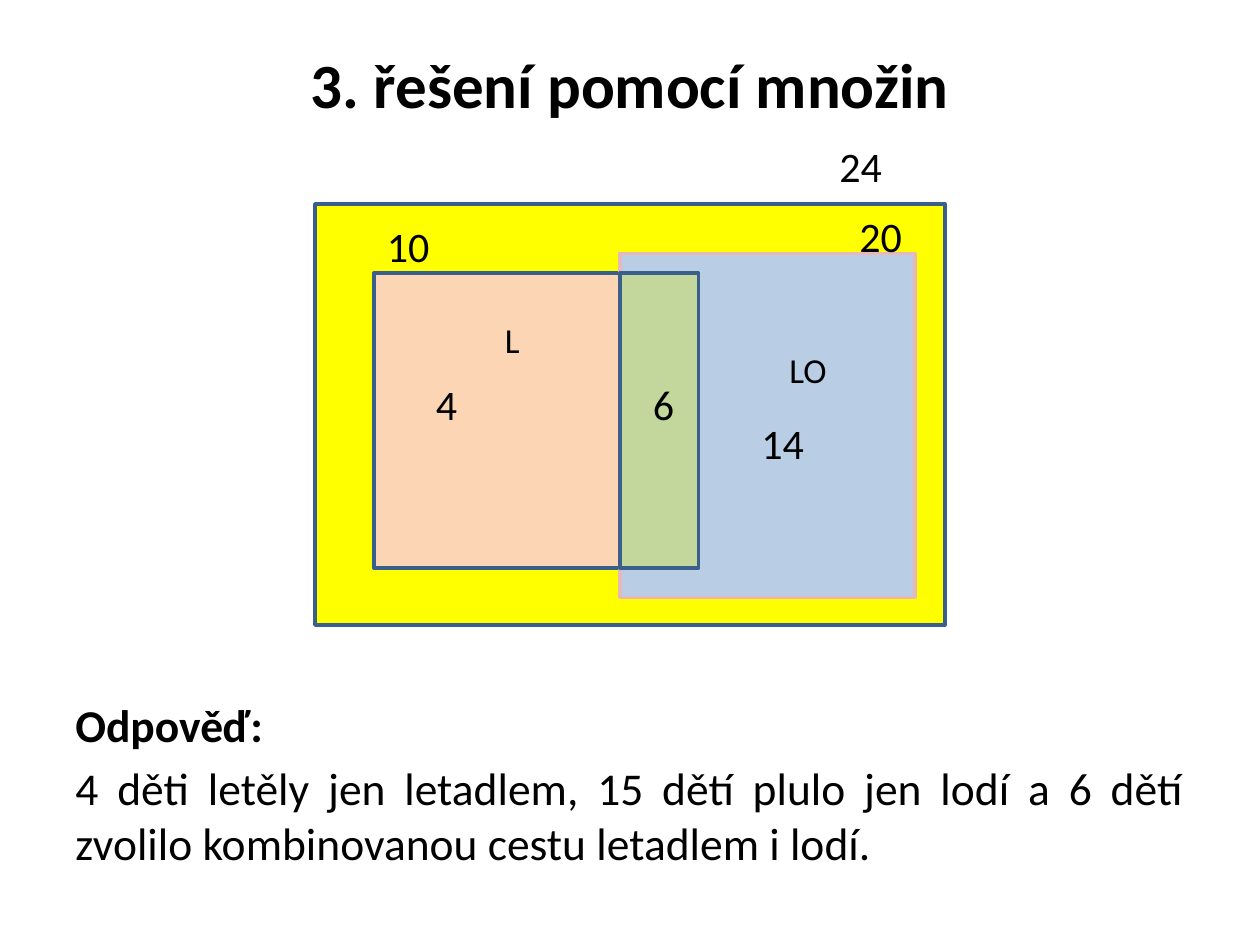
from pptx import Presentation
from pptx.dml.color import RGBColor
from pptx.enum import shapes, text
from pptx.util import Pt


def paint(color_format, hex_color):
    color_format.rgb = RGBColor.from_string(hex_color)


def add_text(left, top, width, height, lines, size, bold_first=False,
             align=text.PP_ALIGN.LEFT, anchor=text.MSO_ANCHOR.TOP):
    """Add a wrapped text box with one paragraph per line."""
    frame = slide.shapes.add_textbox(Pt(left), Pt(top), Pt(width), Pt(height)).text_frame
    frame.word_wrap = True
    frame.vertical_anchor = anchor
    frame.text = "\n".join(lines)
    for index, paragraph in enumerate(frame.paragraphs):
        paragraph.alignment = align
        if index:
            paragraph.space_before = Pt(size * 0.2)
        font = paragraph.runs[0].font
        font.name, font.size = "Calibri", Pt(size)
        font.bold = bold_first and index == 0
        paint(font.color, "000000")


prs = Presentation()
prs.slide_width, prs.slide_height = Pt(720), Pt(540)
slide = prs.slides.add_slide(prs.slide_layouts[6])

add_text(36, 21.6, 648, 52.5, ["3. řešení pomocí množin"], 36, True,
         text.PP_ALIGN.CENTER, text.MSO_ANCHOR.MIDDLE)

# Sets as left, top, right, bottom; the overlap follows from the two inner sets
everyone = (180, 116.6, 540, 357.2)
plane = (213.8, 156, 388, 324.7)
ship = (354.2, 144.8, 522.8, 341.4)
overlap = (ship[0], plane[1], plane[2] + 11.2, plane[3])
for (left, top, right, bottom), fill, outline in [
    (everyone, "FFFF00", "3A5F8C"),
    (plane, "FCD5B5", "3A5F8C"),
    (ship, "B9CDE5", "E6B9B8"),
    (overlap, "C3D69B", "3A5F8C"),
]:
    region = slide.shapes.add_shape(shapes.MSO_SHAPE.RECTANGLE, Pt(left), Pt(top),
                                    Pt(right - left), Pt(bottom - top))
    region.shadow.inherit = False
    region.fill.solid()
    paint(region.fill.fore_color, fill)
    paint(region.line.color, outline)
    region.line.width = Pt(2)

for label, left, top, width, size in [
    ("24", 472.5, 77, 78.5, 24),
    ("4", 242, 212.5, 62, 24),
    ("14", 428, 235, 67.5, 24),
    ("10", 214, 122.5, 50.5, 24),
    ("20", 484, 116.6, 44.5, 24),
    ("L", 281.5, 178.5, 50.5, 20),
    ("LO", 444, 195.8, 50.5, 20),
    ("6", 366, 212.5, 28, 24),
]:
    add_text(left, top, width, 36.5 if size == 24 else 31.5, [label], size)

add_text(36, 394.5, 648, 116.7,
         ["Odpověď:",
          "4 děti letěly jen letadlem, 15 dětí plulo jen lodí a 6 dětí "
          "zvolilo kombinovanou cestu letadlem i lodí."],
         26, True, text.PP_ALIGN.JUSTIFY)

prs.save("out.pptx")
